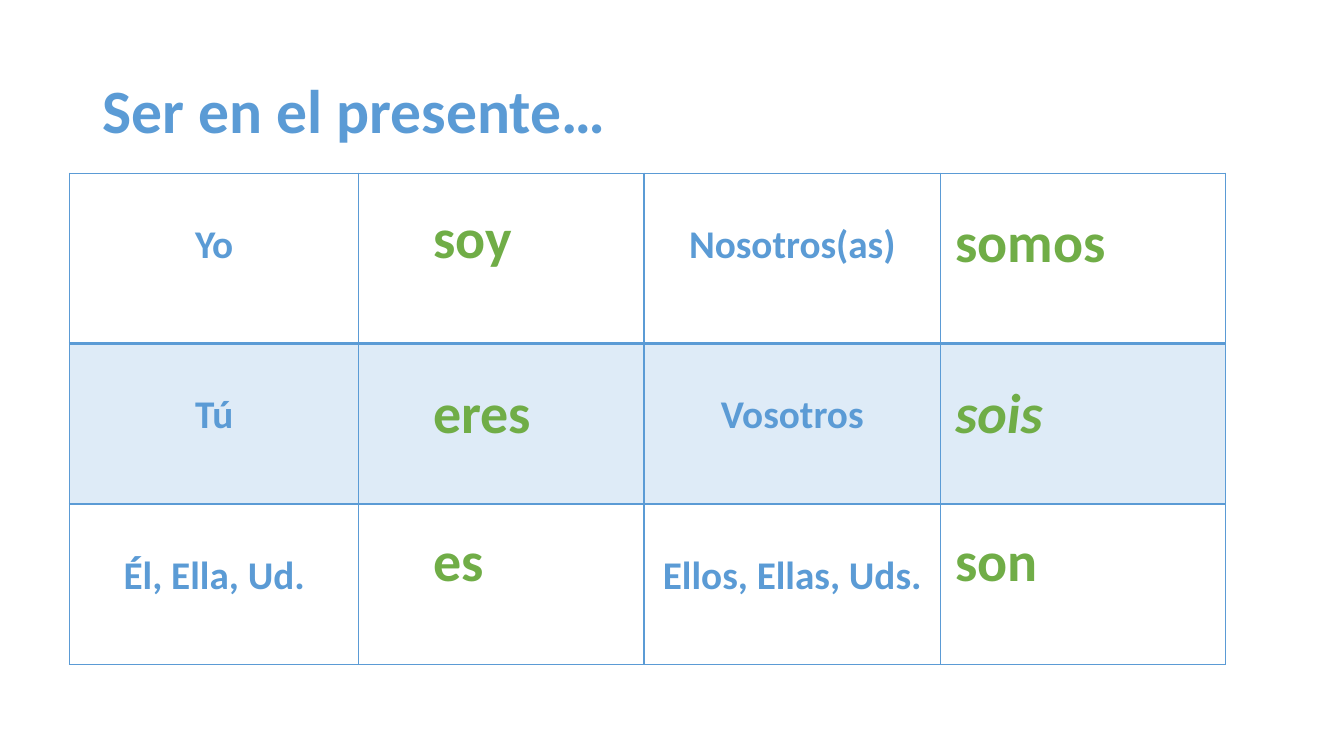
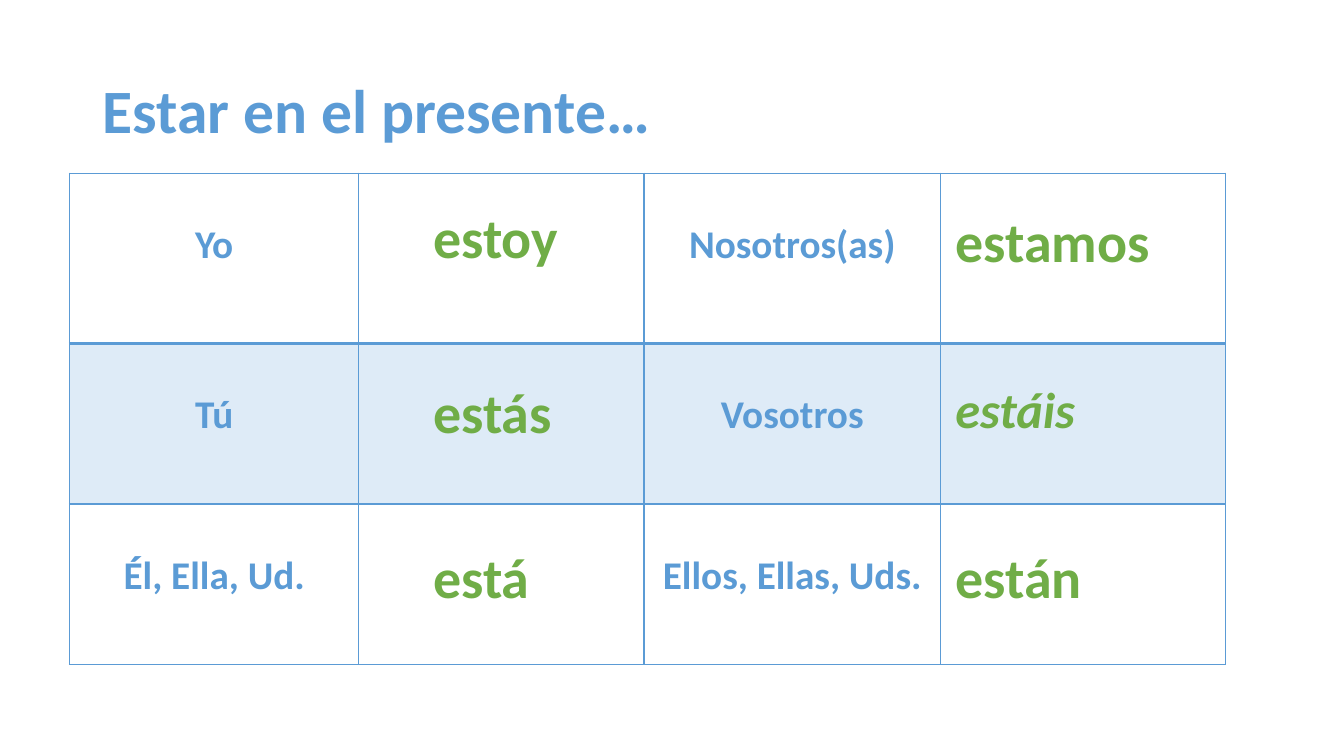
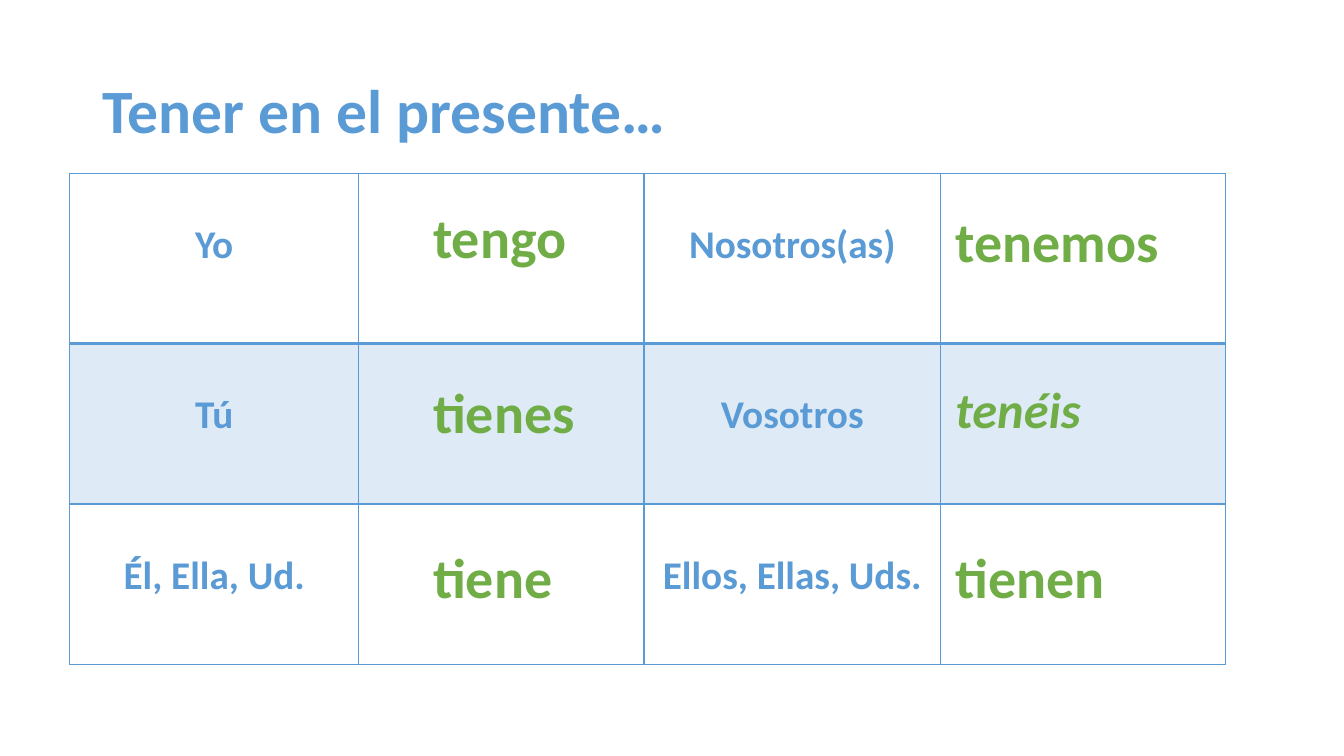
from lxml.etree import SubElement
from pptx import Presentation
from pptx.dml.color import RGBColor
from pptx.enum.text import MSO_ANCHOR, MSO_AUTO_SIZE, PP_ALIGN
from pptx.oxml.ns import qn
from pptx.util import Pt

FONT = "Calibri"
BLUE, PALE, GREEN = "5B9BD5", "DEEBF7", "70AD47"
TITLE = (66.2, 28.8, 828, 104.4)
GRID = (49.7, 123.8)
COLS = (206.6, 203.8, 211.7, 203.8)
ROWS = (121.7, 114.5, 114.5)
NOUNS = (
    ("Yo", "Nosotros(as)"),
    ("Tú", "Vosotros"),
    ("Él, Ella, Ud.", "Ellos, Ellas, Uds."),
)
VERB_X = (252.7, 625.7)
VERB_W = 134.6

SLIDES = (
    ("Ser", (("soy", "somos"), ("eres", "sois"), ("es", "son")), 40, 248.4, VERB_W),
    ("Estar", (("estoy", "estamos"), ("estás", "estáis"), ("está", "están")), 36, 260, 182.9),
    ("Tener", (("tengo", "tenemos"), ("tienes", "tenéis"), ("tiene", "tienen")), 36, 260, 182.9),
)


def paint(target, color):
    target.solid()
    target.fore_color.rgb = RGBColor.from_string(color)


def add_run(para, text, size, color, slant=False):
    run = para.add_run()
    run.text = text
    font = run.font
    font.name, font.size, font.bold = FONT, Pt(size), True
    if slant:
        font.italic = True
    paint(font.fill, color)


def add_text(slide, box, text, size, color, slant=False):
    shape = slide.shapes.add_textbox(*map(Pt, box))
    frame = shape.text_frame
    frame.word_wrap = True
    add_run(frame.paragraphs[0], text, size, color, slant)
    return frame


def add_title(slide, box, text):
    frame = add_text(slide, box, text, 44, BLUE)
    frame.auto_size = MSO_AUTO_SIZE.NONE
    frame.vertical_anchor = MSO_ANCHOR.MIDDLE
    frame.paragraphs[0].line_spacing = 0.9


def add_edges(cell, row):
    props = cell._tc.get_or_add_tcPr()
    top = 2 if row == 1 else 1
    base = 2 if row == 0 else 1
    for side, width in (("L", 1), ("R", 1), ("T", top), ("B", base)):
        line = SubElement(props, qn("a:ln" + side), w=str(Pt(width)))
        fill = SubElement(line, qn("a:solidFill"))
        SubElement(fill, qn("a:srgbClr"), val=BLUE)


def add_grid(slide, spot):
    box = (*spot, sum(COLS), sum(ROWS))
    table = slide.shapes.add_table(len(ROWS), len(COLS), *map(Pt, box)).table
    table.first_row = table.horz_banding = False
    for col, width in zip(table.columns, COLS):
        col.width = Pt(width)
    for row, high in enumerate(ROWS):
        table.rows[row].height = Pt(high)
        for col in range(len(COLS)):
            cell = table.cell(row, col)
            add_edges(cell, row)
            if row == 1:
                paint(cell.fill, PALE)
            else:
                cell.fill.background()
            if col % 2 == 0:
                cell.margin_left = cell.margin_right = Pt(5)
                cell.margin_top, cell.margin_bottom = Pt(34.2), Pt(0)
                para = cell.text_frame.paragraphs[0]
                para.alignment = PP_ALIGN.CENTER
                add_run(para, NOUNS[row][col // 2], 28, BLUE)


def add_verbs(slide, spot, verbs, small, last, wide):
    left, top = spot
    tops = ((17.3, 20.2), (142.6, 142.6), (last, last))
    for row, pair in enumerate(verbs):
        for col, verb in enumerate(pair):
            slant = (row, col) == (1, 1)
            size = small if slant else 40
            width = wide if (row, col) == (0, 1) else VERB_W
            box = (left + VERB_X[col], top + tops[row][col], width, size * 1.22 + 7.2)
            frame = add_text(slide, box, verb, size, GREEN, slant)
            frame.auto_size = MSO_AUTO_SIZE.SHAPE_TO_FIT_TEXT


def main():
    deck = Presentation()
    deck.slide_width, deck.slide_height = Pt(960), Pt(540)
    for name, verbs, small, last, wide in SLIDES:
        slide = deck.slides.add_slide(deck.slide_layouts[6])
        add_title(slide, TITLE, name + " en el presente…")
        add_grid(slide, GRID)
        add_verbs(slide, GRID, verbs, small, last, wide)
    deck.save("out.pptx")


if __name__ == "__main__":
    main()
